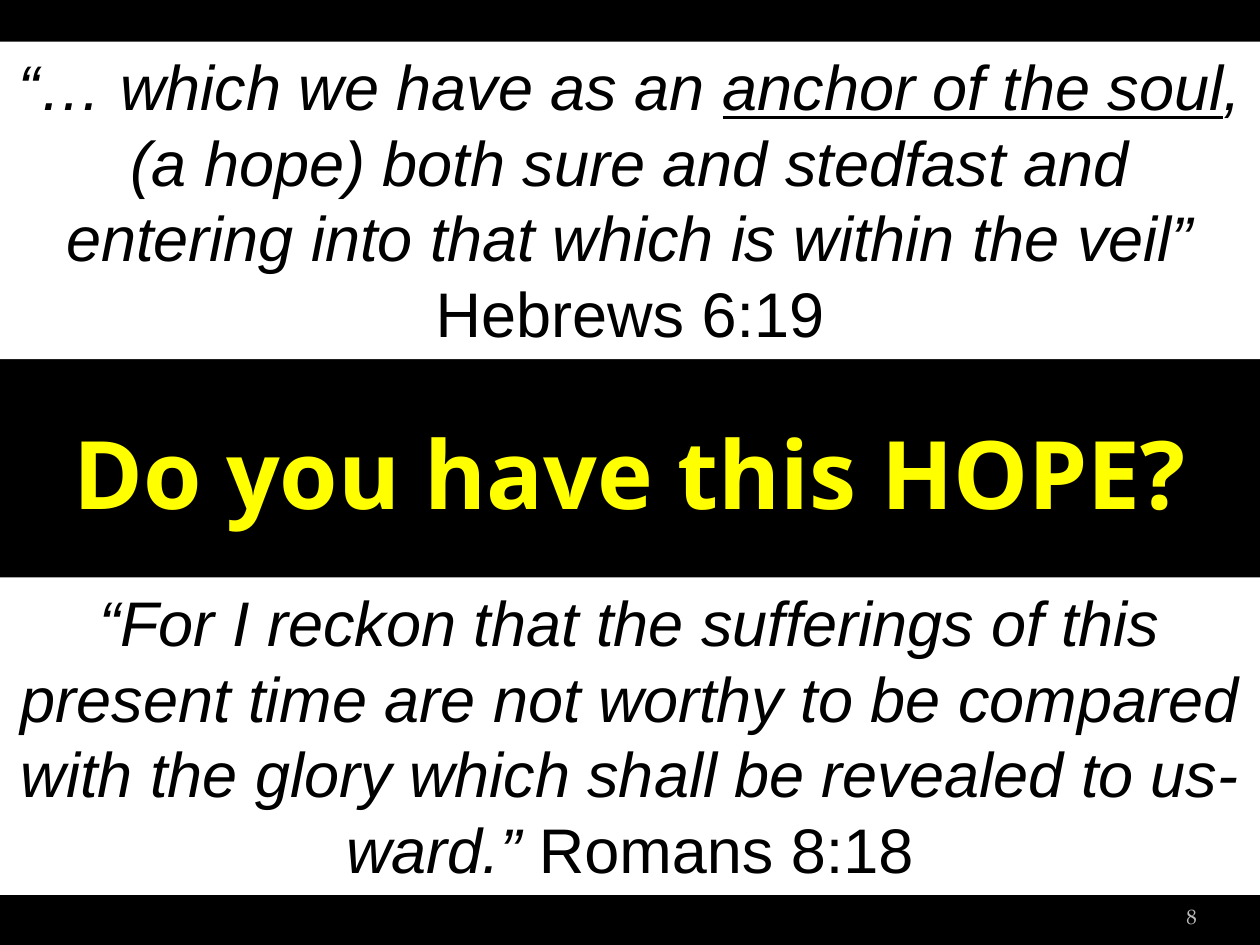
import pptx
import pptx.util
import pptx.dml.color
import pptx.enum.shapes
import pptx.enum.text

WIDTH, HEIGHT = pptx.util.Inches(10), pptx.util.Inches(7.5)
ALIGN = pptx.enum.text.PP_ALIGN
ANCHOR = pptx.enum.text.MSO_ANCHOR

HEBREWS = [
    ("“… which we have as an ", "italic"),
    ("anchor of the soul", "italic underline"),
    (", (a hope) both sure and stedfast and entering into that which is within the veil”", "italic"),
    (" Hebrews 6:19", ""),
]
ROMANS = [
    ("“For I reckon that the sufferings of this present time are not worthy "
     "to be compared with the glory which shall be revealed to us-ward.”", "italic"),
    (" Romans 8:18", ""),
]


def color(hex_string):
    return pptx.dml.color.RGBColor.from_string(hex_string)


def share(left, top, width, height):
    """Turn shares of the slide's size into a box of lengths."""
    return (round(left * WIDTH), round(top * HEIGHT),
            round(width * WIDTH), round(height * HEIGHT))


def style(span, font, size, hex_string, bold=False, italic=False, underline=False):
    span.font.name = font
    span.font.size = pptx.util.Pt(size)
    span.font.color.rgb = color(hex_string)
    span.font.bold = bold
    span.font.italic = italic
    span.font.underline = underline


def place_question(page, box, text):
    title = page.shapes.title
    title.left, title.top, title.width, title.height = box
    frame = title.text_frame
    frame.text = text
    frame.word_wrap = True
    frame.vertical_anchor = ANCHOR.MIDDLE
    para = frame.paragraphs[0]
    para.alignment = ALIGN.CENTER
    style(para.runs[0], "Open Sans", 54, "FFFF00", bold=True)


def place_verse(page, box, parts):
    """Add a white band holding a quotation and its reference."""
    band = page.shapes.add_shape(pptx.enum.shapes.MSO_SHAPE.RECTANGLE, *box)
    band.shadow.inherit = False
    band.fill.solid()
    band.fill.fore_color.rgb = color("FFFFFF")
    band.line.fill.background()
    frame = band.text_frame
    frame.word_wrap = True
    frame.vertical_anchor = ANCHOR.TOP
    para = frame.paragraphs[0]
    para.alignment = ALIGN.CENTER
    for text, look in parts:
        span = para.add_run()
        span.text = text
        style(span, "Arial", 36, "000000",
              italic="italic" in look, underline="underline" in look)


def place_number(page, box, text):
    frame = page.shapes.add_textbox(*box).text_frame
    frame.text = text
    frame.word_wrap = True
    frame.vertical_anchor = ANCHOR.BOTTOM
    frame.margin_left = frame.margin_right = 0
    para = frame.paragraphs[0]
    para.alignment = ALIGN.RIGHT
    style(para.runs[0], "TeX Gyre Pagella", 12, "BDBDBD")


def main():
    deck = pptx.Presentation()
    deck.slide_width, deck.slide_height = WIDTH, HEIGHT
    page = deck.slides.add_slide(deck.slide_layouts.get_by_name("Title Only"))
    page.background.fill.solid()
    page.background.fill.fore_color.rgb = color("000000")

    place_question(page, share(0.01, 0.432, 0.98, 0.135), "Do you have this HOPE?")
    for top, verse in ((0.611, ROMANS), (0.044, HEBREWS)):
        place_verse(page, share(0, top, 1, 0.336), verse)
    place_number(page, share(0.867, 0.936, 0.083, 0.053), "8")
    deck.save("out.pptx")


if __name__ == "__main__":
    main()
